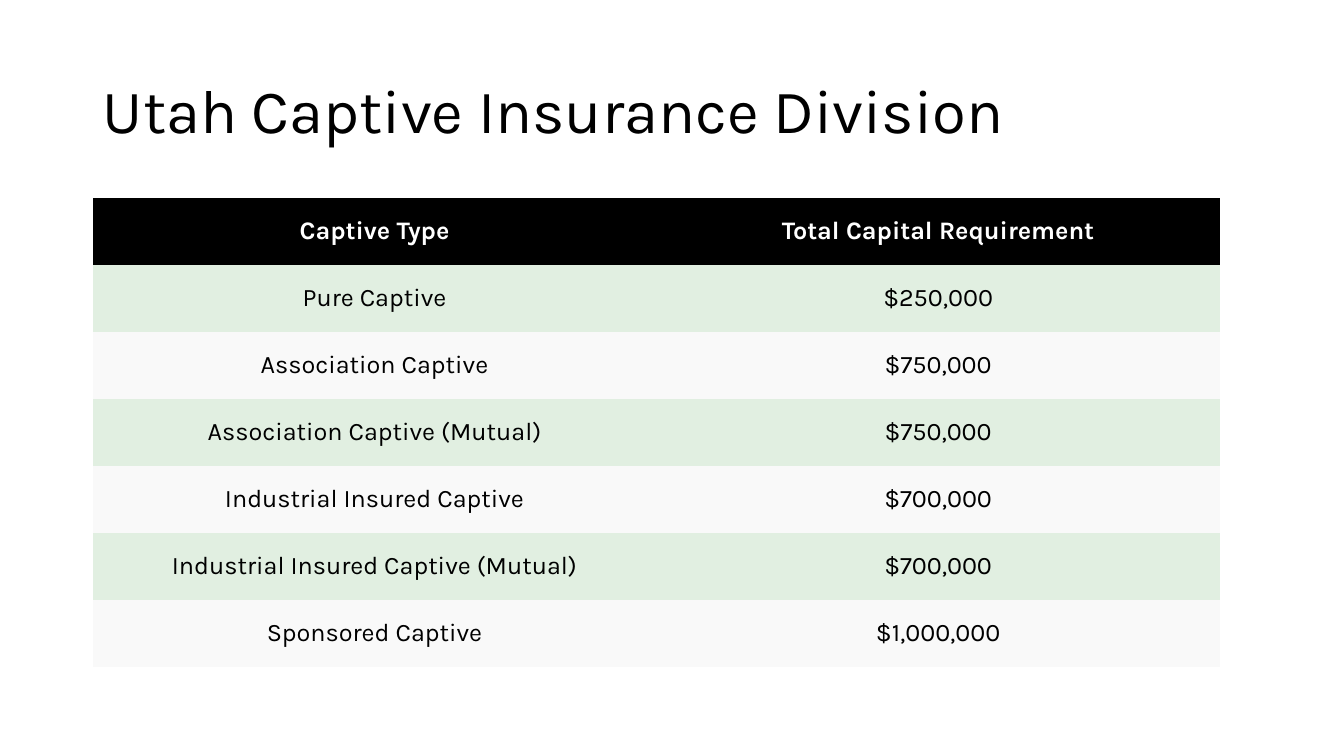
from dataclasses import dataclass
from pptx import Presentation
from pptx.dml.color import RGBColor
from pptx.enum.text import MSO_ANCHOR, PP_ALIGN
from pptx.oxml.ns import qn
from pptx.util import Inches, Pt

TITLE = "Utah Captive Insurance Division"
ROWS = [
    ("Captive Type", "Total Capital Requirement"),
    ("Pure Captive", "$250,000"),
    ("Association Captive", "$750,000"),
    ("Association Captive (Mutual)", "$750,000"),
    ("Industrial Insured Captive", "$700,000"),
    ("Industrial Insured Captive (Mutual)", "$700,000"),
    ("Sponsored Captive", "$1,000,000"),
]
PLAIN = "{2D5ABB26-0587-4C30-8999-92F81FD0307C}"


@dataclass(frozen=True)
class Theme:
    font: str = "Karla"
    head: int = 44
    body: int = 18
    black: str = "000000"
    white: str = "FFFFFF"
    green: str = "E1EFE1"
    gray: str = "F9F9F9"


THEME = Theme()


def style(para, size, color, bold=False):
    font = para.font
    font.name = THEME.font
    font.size = Pt(size)
    font.bold = bold
    font.color.rgb = RGBColor.from_string(color)


def add_title(slide):
    title = slide.shapes.title
    title.left, title.top = Inches(0.92), Inches(0.4)
    title.width, title.height = Inches(11.5), Inches(1.45)
    frame = title.text_frame
    frame.text = TITLE
    frame.word_wrap = True
    frame.vertical_anchor = MSO_ANCHOR.MIDDLE
    para = frame.paragraphs[0]
    para.alignment = PP_ALIGN.LEFT
    para.line_spacing = 0.9
    style(para, THEME.head, THEME.black)


def fill_cell(cell, text, row):
    top = row == 0
    band = THEME.green if row % 2 else THEME.gray
    cell.fill.solid()
    cell.fill.fore_color.rgb = RGBColor.from_string(THEME.black if top else band)
    cell.vertical_anchor = MSO_ANCHOR.MIDDLE
    cell.margin_left = cell.margin_right = Inches(0.05)
    cell.margin_top = cell.margin_bottom = Inches(0.05)
    cell.text = text
    para = cell.text_frame.paragraphs[0]
    para.alignment = PP_ALIGN.CENTER
    style(para, THEME.body, THEME.white if top else THEME.black, top)


def add_grid(slide):
    frame = slide.shapes.add_table(
        len(ROWS), len(ROWS[0]),
        Inches(0.92), Inches(1.96), Inches(11.18), Inches(4.66),
    )
    for mark in frame.element.iter(qn("a:tableStyleId")):
        mark.text = PLAIN
    table = frame.table
    table.horz_banding = False
    for row, texts in enumerate(ROWS):
        for col, text in enumerate(texts):
            fill_cell(table.cell(row, col), text, row)


def main():
    deck = Presentation()
    deck.slide_width, deck.slide_height = Inches(13.33), Inches(7.5)
    slide = deck.slides.add_slide(deck.slide_layouts[5])
    add_title(slide)
    add_grid(slide)
    deck.save("out.pptx")


if __name__ == "__main__":
    main()
